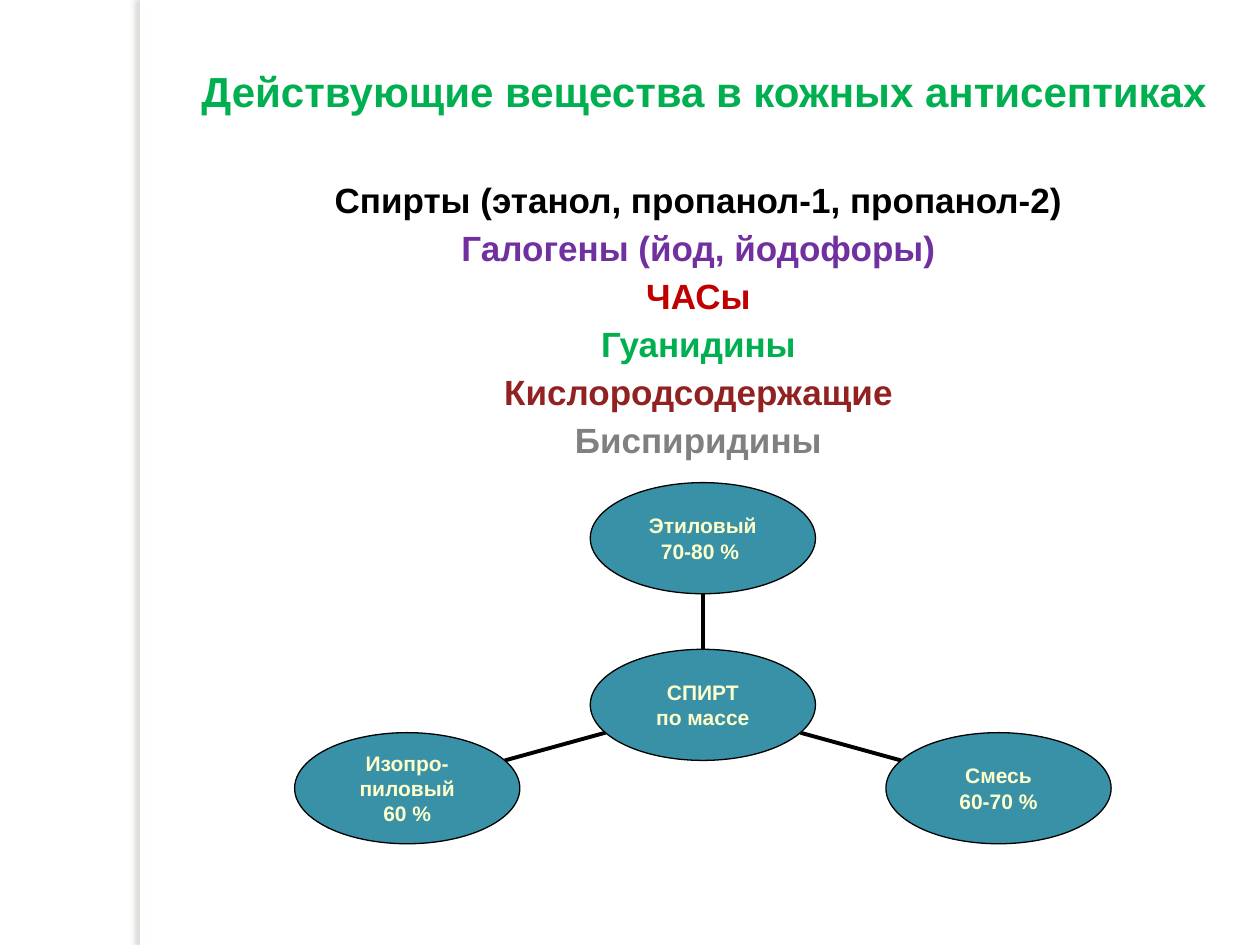
from math import cos, radians, sin

from lxml.etree import SubElement
from pptx import Presentation
from pptx.dml.color import RGBColor
from pptx.enum.shapes import MSO_CONNECTOR, MSO_SHAPE
from pptx.enum.text import MSO_ANCHOR, PP_ALIGN
from pptx.oxml.ns import qn
from pptx.util import Cm, Pt

COLORS = {
    "white": "FFFFFF", "black": "000000", "green": "00B050",
    "violet": "7030A0", "red": "C00000", "maroon": "922222",
    "gray": "808080", "teal": "3891A7", "cream": "FFFFCC",
    "shade": "736F63",
}
FONT = {"name": "Arial", "bold": True}
LIST_SPACING = {"line_spacing": 1.1, "space_before": Pt(1.1)}
NO_MARGINS = {"margin_left": 0, "margin_right": 0,
              "margin_top": 0, "margin_bottom": 0}

SUBSTANCES = [
    ("Спирты (этанол, пропанол-1, пропанол-2)", "black"),
    ("Галогены (йод, йодофоры)", "violet"),
    ("ЧАСы", "red"),
    ("Гуанидины", "green"),
    ("Кислородсодержащие", "maroon"),
    ("Биспиридины", "gray"),
]
HUB = ["СПИРТ", "по массе"]
# Angles run clockwise from the right-hand side
ALCOHOLS = [
    (150, ["Изопро-", "пиловый", "60 %"]),
    (30, ["Смесь", "60-70 %"]),
    (270, ["Этиловый", "70-80 % "]),
]


def rgb(color):
    return RGBColor.from_string(COLORS[color])


def apply(target, values):
    for attribute, value in values.items():
        setattr(target, attribute, value)


def write_lines(frame, lines, size, spacing=None):
    """Write centred (text, colour) lines, one paragraph each."""
    for index, (text, color) in enumerate(lines):
        paragraph = frame.add_paragraph() if index else frame.paragraphs[0]
        paragraph.text = text
        paragraph.alignment = PP_ALIGN.CENTER
        apply(paragraph, spacing or {})
        if not index:
            paragraph.space_before = Pt(0)
        apply(paragraph.font, {**FONT, "size": Pt(size)})
        paragraph.font.color.rgb = rgb(color)


def add_side_strip(slide, left, top, width, height):
    strip = slide.shapes.add_shape(
        MSO_SHAPE.RECTANGLE, Cm(left), Cm(top), Cm(width), Cm(height))
    strip.fill.solid()
    strip.fill.fore_color.rgb = rgb("white")
    strip.line.fill.background()
    # Soft shadow thrown to the left
    effects = SubElement(strip._element.spPr, qn("a:effectLst"))
    shadow = SubElement(effects, qn("a:outerShdw"), blurRad=str(Pt(3)),
                        dist=str(Pt(3)), dir="10800000", algn="tl",
                        rotWithShape="0")
    shade = SubElement(shadow, qn("a:srgbClr"), val=COLORS["shade"])
    SubElement(shade, qn("a:alpha"), val="25000")


def add_text(slide, left, top, width, height, lines, size, spacing=None):
    box = slide.shapes.add_textbox(Cm(left), Cm(top), Cm(width), Cm(height))
    box.text_frame.word_wrap = True
    write_lines(box.text_frame, lines, size, spacing)


def add_oval(slide, center_x, center_y, radius_x, radius_y, lines):
    oval = slide.shapes.add_shape(
        MSO_SHAPE.OVAL, Cm(center_x - radius_x), Cm(center_y - radius_y),
        Cm(2 * radius_x), Cm(2 * radius_y))
    oval.shadow.inherit = False
    oval.fill.solid()
    oval.fill.fore_color.rgb = rgb("teal")
    oval.line.color.rgb = rgb("black")
    oval.line.width = Pt(0.75)
    apply(oval.text_frame, {**NO_MARGINS, "word_wrap": False,
                            "vertical_anchor": MSO_ANCHOR.MIDDLE})
    write_lines(oval.text_frame, [(line, "cream") for line in lines], 12)


def add_spoke(slide, start_x, start_y, end_x, end_y):
    spoke = slide.shapes.add_connector(
        MSO_CONNECTOR.STRAIGHT, Cm(start_x), Cm(start_y), Cm(end_x), Cm(end_y))
    spoke.line.color.rgb = rgb("black")
    spoke.line.width = Pt(2.25)
    SubElement(spoke._element.spPr, qn("a:effectLst"))


def add_alcohol_diagram(slide, left, top, width, height):
    """Hub with three ovals on an elliptical orbit filling the box."""
    radius_x, radius_y = 2.27, 1.12
    hub_x, hub_y = left + width / 2, top + 4 * radius_y
    orbit_x = (width / 2 - radius_x) / cos(radians(30))
    orbit_y = 3 * radius_y
    for angle, lines in ALCOHOLS:
        across, down = cos(radians(angle)), sin(radians(angle))
        center_x, center_y = hub_x + orbit_x * across, hub_y + orbit_y * down
        add_spoke(slide, hub_x + radius_x * across, hub_y + radius_y * down,
                  center_x - radius_x * across, center_y - radius_y * down)
        add_oval(slide, center_x, center_y, radius_x, radius_y, lines)
    add_oval(slide, hub_x, hub_y, radius_x, radius_y, HUB)


def main():
    presentation = Presentation()
    presentation.slide_width, presentation.slide_height = Cm(25.4), Cm(19.05)
    slide = presentation.slides.add_slide(presentation.slide_layouts[6])
    slide.background.fill.solid()
    slide.background.fill.fore_color.rgb = rgb("white")

    add_side_strip(slide, 2.82, 0, 0.2, 19.05)
    # Title and list of substances
    add_text(slide, 3.58, 1.19, 21.23, 1.28,
             [("Действующие вещества в кожных антисептиках", "green")], 24)
    add_text(slide, 3.96, 3.38, 20.24, 6.15, SUBSTANCES, 20, LIST_SPACING)
    add_alcohol_diagram(slide, 5.94, 9.73, 16.46, 7.24)

    presentation.save("out.pptx")


if __name__ == "__main__":
    main()
